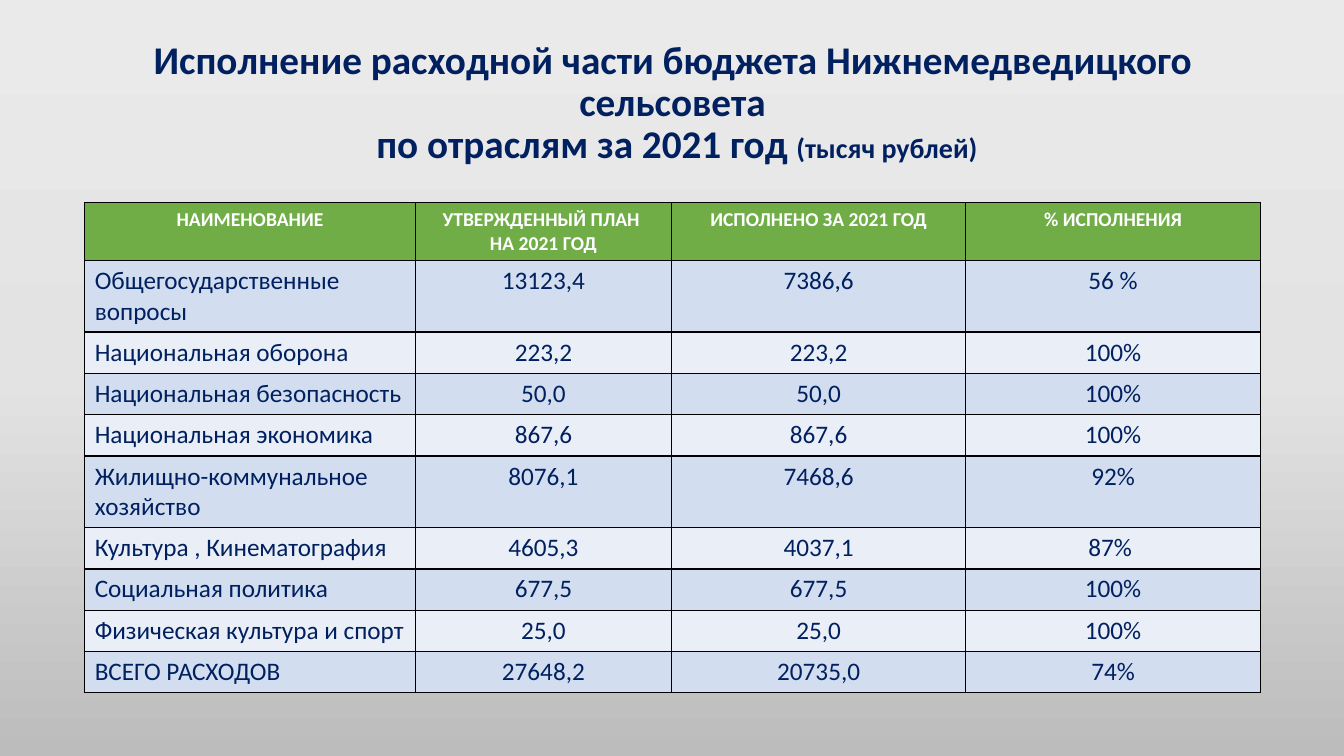
import copy

import pptx
import pptx.dml.color
import pptx.enum.text
import pptx.oxml
import pptx.oxml.ns
import pptx.util
from lxml import etree

WIDTH, HEIGHT = 13.33, 7.5
CENTER = pptx.enum.text.PP_ALIGN.CENTER
LEFT = pptx.enum.text.PP_ALIGN.LEFT

HEADINGS = ["НАИМЕНОВАНИЕ", "УТВЕРЖДЕННЫЙ ПЛАН \nНА 2021 ГОД",
            "ИСПОЛНЕНО ЗА 2021 ГОД", "% ИСПОЛНЕНИЯ"]
EXPENSES = [
    ["Общегосударственные вопросы", "13123,4", "7386,6", "56 %"],
    ["Национальная оборона", "223,2", "223,2", "100%"],
    ["Национальная безопасность", "50,0", "50,0", "100%"],
    ["Национальная экономика", "867,6", "867,6", "100%"],
    ["Жилищно-коммунальное хозяйство", "8076,1", "7468,6", "92%"],
    ["Культура , Кинематография", "4605,3", "4037,1", "87% "],
    ["Социальная политика", "677,5", "677,5", "100%"],
    ["Физическая культура и спорт", "25,0", "25,0", "100%"],
    ["ВСЕГО РАСХОДОВ", "27648,2", "20735,0", "74%"],
]


def color(value):
    return pptx.dml.color.RGBColor.from_string(value)


class BudgetPage:
    font_name = "Calibri"
    ink, light = "002060", "FFFFFF"
    heading_fill, bands = "70AD47", ["D2DEEF", "EAEFF7"]

    def __init__(self, deck):
        self.deck = deck
        self.page = deck.slides.add_slide(deck.slide_layouts[5])

    def box(self, left, top, width, height):
        across, down = self.deck.slide_width, self.deck.slide_height
        return int(left * across), int(top * down), int(width * across), int(height * down)

    def style(self, para, size, ink, bold, align):
        para.alignment = align
        para.font.name = self.font_name
        para.font.size = pptx.util.Pt(size)
        para.font.bold = bold
        para.font.color.rgb = color(ink)

    def background(self, shades):
        fill = self.page.background.fill
        fill.gradient()
        fill.gradient_angle = 270
        stop_list = self.page.element.find(".//" + pptx.oxml.ns.qn("a:gsLst"))
        stop_list.append(copy.deepcopy(stop_list[-1]))
        for index, (stop, shade) in enumerate(zip(fill.gradient_stops, shades)):
            stop.position = index / (len(shades) - 1)
            stop.color.rgb = color(shade)

    def title(self, lines, unit, place):
        title = self.page.shapes.title
        title.left, title.top, title.width, title.height = self.box(*place)
        frame = title.text_frame
        frame.auto_size = pptx.enum.text.MSO_AUTO_SIZE.NONE
        frame.vertical_anchor = pptx.enum.text.MSO_ANCHOR.MIDDLE
        para = frame.paragraphs[0]
        self.style(para, 28, self.ink, True, CENTER)
        para.line_spacing = 0.9
        para.add_run().text = lines[0]
        para.add_line_break()
        para.add_run().text = lines[1]
        span = para.add_run()
        span.text = unit
        span.font.size = pptx.util.Pt(20)

    def borders(self, cell):
        properties = cell._tc.get_or_add_tcPr()
        for side in ("lnL", "lnR", "lnT", "lnB"):
            line = etree.SubElement(properties, pptx.oxml.ns.qn("a:" + side), w="12700")
            paint = etree.SubElement(line, pptx.oxml.ns.qn("a:solidFill"))
            etree.SubElement(paint, pptx.oxml.ns.qn("a:srgbClr"), val="000000")

    def cell(self, cell, text, fill, size, ink, bold, align):
        self.borders(cell)
        cell.fill.solid()
        cell.fill.fore_color.rgb = color(fill)
        cell.text = text
        for para in cell.text_frame.paragraphs:
            self.style(para, size, ink, bold, align)

    def table(self, rows, place, shares, row_height):
        frame = self.page.shapes.add_table(len(rows), len(shares), *self.box(*place))
        table = frame.table
        table.first_row = table.horz_banding = False
        for column, share in zip(table.columns, shares):
            column.width = int(share * self.deck.slide_width)
        for row in table.rows:
            row.height = int(row_height * self.deck.slide_height)
        for row, texts in enumerate(rows):
            for column, text in enumerate(texts):
                cell = table.cell(row, column)
                if row == 0:
                    self.cell(cell, text, self.heading_fill, 14, self.light, True, CENTER)
                else:
                    align = CENTER if column else LEFT
                    band = self.bands[(row - 1) % 2]
                    self.cell(cell, text, band, 18, self.ink, False, align)


def main():
    deck = pptx.Presentation()
    deck.slide_width = pptx.util.Inches(WIDTH)
    deck.slide_height = pptx.util.Inches(HEIGHT)
    budget = BudgetPage(deck)
    budget.background(["EBEAEA", "E4E3E3", "BDBCBC"])
    budget.title(["Исполнение расходной части бюджета Нижнемедведицкого сельсовета",
                  " по отраслям за 2021 год "], "(тысяч рублей)",
                 (0.92 / WIDTH, 0.4 / HEIGHT, 11.5 / WIDTH, 1.26 / HEIGHT))
    shares = [width / WIDTH for width in (3.28, 2.54, 2.92, 2.92)]
    budget.table([HEADINGS] + EXPENSES,
                 (0.84 / WIDTH, 2.01 / HEIGHT, sum(shares), 4.81 / HEIGHT),
                 shares, 0.41 / HEIGHT)
    deck.save("out.pptx")


if __name__ == "__main__":
    main()
